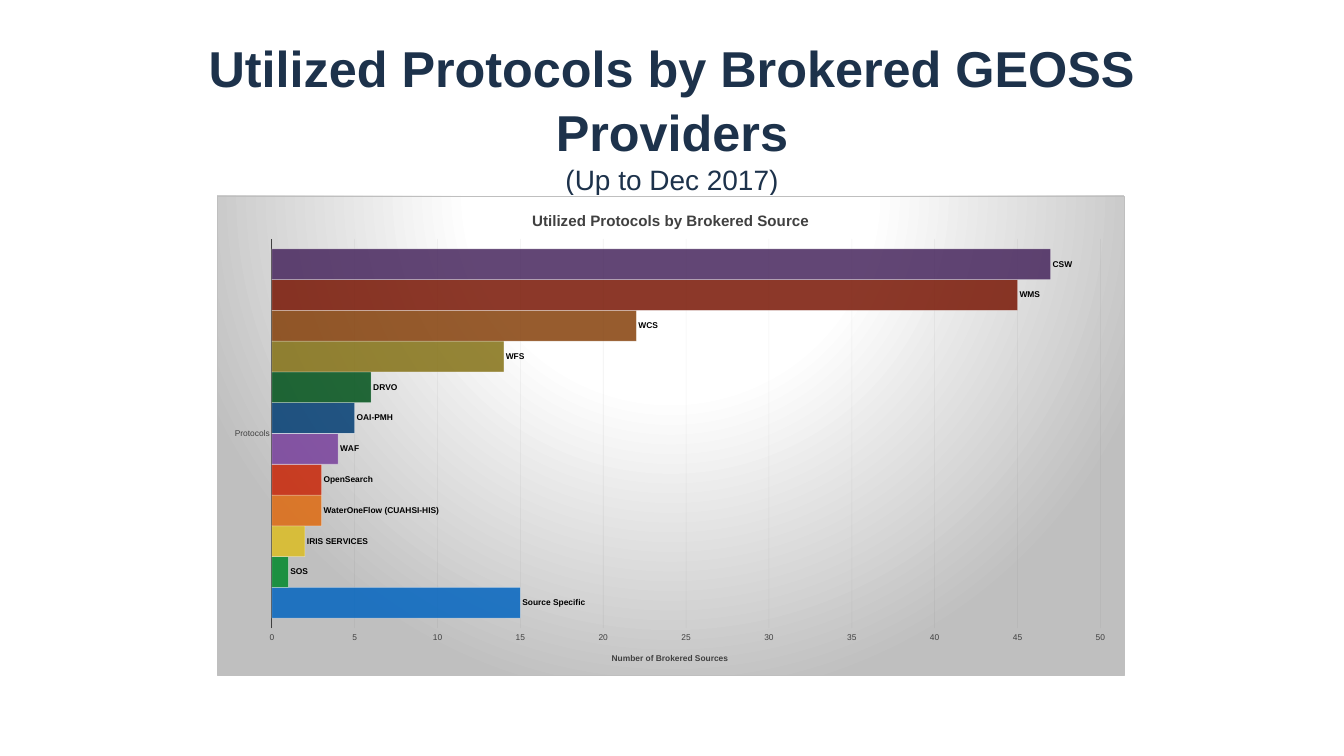
from dataclasses import dataclass

from lxml import etree
from pptx import Presentation
from pptx.chart.data import CategoryChartData
from pptx.dml.color import RGBColor
from pptx.enum import chart as ch, text
from pptx.oxml import ns, parse_xml
from pptx.util import Inches, Pt


@dataclass(frozen=True)
class Theme:
    """Colours and type sizes of the slide."""
    font: str = "Arial"
    navy: str = "1D324B"
    grey: str = "404040"
    black: str = "000000"
    white: str = "FFFFFF"
    silver: str = "BFBFBF"
    grid: str = "0D0D0D"
    title: float = 72
    subtitle: float = 40
    chart_title: float = 21.6
    label: float = 12


T = Theme()

PROTOCOLS = [
    ("Source Specific", 15, "0365C0"),
    ("SOS", 1, "00882B"),
    ("IRIS SERVICES", 2, "DCBD23"),
    ("WaterOneFlow (CUAHSI-HIS)", 3, "DE6A10"),
    ("OpenSearch", 3, "C82506"),
    ("WAF", 4, "773F9B"),
    ("OAI-PMH", 5, "023D73"),
    ("DRVO", 6, "00521A"),
    ("WFS", 14, "847115"),
    ("WCS", 22, "85400A"),
    ("WMS", 45, "781604"),
    ("CSW", 47, "47265D"),
]


def set_font(font, size, color, bold=False):
    """Format a font in the slide's typeface."""
    font.name, font.size, font.bold = T.font, Pt(size), bold
    font.color.rgb = RGBColor.from_string(color)


def add_text(p, content, size, color, bold=False):
    """Append a formatted run to a paragraph."""
    r = p.add_run()
    r.text = content
    set_font(r.font, size, color, bold)


def set_line(line, color, width, alpha=100):
    """Give a line its colour, width in points and opacity in percent."""
    line.width = Pt(width)
    line.color.rgb = RGBColor.from_string(color)
    set_alpha(line.fill, alpha)


def set_alpha(fill, percent):
    """Set the opacity of a solid fill."""
    color = fill._xPr.find(".//" + ns.qn("a:srgbClr"))
    etree.SubElement(color, ns.qn("a:alpha")).set("val", str(percent * 1000))


def set_background(chart):
    """Give the chart a radial gradient and a thin border."""
    stops = "".join(
        f'<a:gs pos="{pos * 1000}"><a:srgbClr val="{color}"/></a:gs>'
        for pos, color in ((0, T.white), (39, T.white), (100, T.silver)))
    sp_pr = parse_xml(
        f'<c:spPr {ns.nsdecls("c", "a")}><a:gradFill><a:gsLst>{stops}</a:gsLst>'
        '<a:path path="circle"><a:fillToRect l="50000" t="-80000" r="50000" b="180000"/>'
        f'</a:path></a:gradFill><a:ln w="{Pt(0.75)}"><a:solidFill>'
        f'<a:srgbClr val="{T.silver}"/></a:solidFill></a:ln></c:spPr>')
    chart._chartSpace.find(ns.qn("c:chart")).addnext(sp_pr)


def set_plot_box(chart, x, y, w, h):
    """Place the inner plot area in fractions of the chart."""
    area = chart._chartSpace.find(".//" + ns.qn("c:plotArea"))
    for old in area.findall(ns.qn("c:layout")):
        area.remove(old)
    parts = (("layoutTarget", "inner"), ("xMode", "edge"), ("yMode", "edge"),
             ("x", x), ("y", y), ("w", w), ("h", h))
    body = "".join(f'<c:{tag} val="{val}"/>' for tag, val in parts)
    area.insert(0, parse_xml(
        f'<c:layout {ns.nsdecls("c")}><c:manualLayout>{body}</c:manualLayout></c:layout>'))


def format_axes(chart):
    """Format the category and value axes."""
    cat, val = chart.category_axis, chart.value_axis
    for axis in (cat, val):
        set_font(axis.tick_labels.font, T.label, T.grey)
    cat.major_tick_mark = ch.XL_TICK_MARK.NONE
    set_line(cat.format.line, T.grey, 1.5)
    val.minimum_scale, val.maximum_scale, val.major_unit = 0, 50, 5
    val.major_tick_mark = ch.XL_TICK_MARK.OUTSIDE
    val.format.line.fill.background()
    set_line(val.major_gridlines.format.line, T.grid, 0.75, 5)
    add_text(val.axis_title.text_frame.paragraphs[0],
             "Number of Brokered Sources", T.label, T.grey, bold=True)


def format_series(s, color):
    """Colour one bar and label it with its series name."""
    s.format.fill.solid()
    s.format.fill.fore_color.rgb = RGBColor.from_string(color)
    set_alpha(s.format.fill, 85)
    set_line(s.format.line, T.white, 0.75, 50)
    labels = s.data_labels
    labels.show_series_name, labels.show_value = True, False
    labels.position = ch.XL_LABEL_POSITION.OUTSIDE_END
    set_font(labels.font, T.label, T.black, bold=True)


def build_title(slide, x, y, w, h):
    """Place the slide title and its subtitle line."""
    sp = slide.shapes.title
    sp.left, sp.top, sp.width, sp.height = map(Inches, (x, y, w, h))
    tf = sp.text_frame
    tf.word_wrap, tf.auto_size = True, text.MSO_AUTO_SIZE.NONE
    tf.vertical_anchor = text.MSO_ANCHOR.MIDDLE
    tf.margin_left = tf.margin_right = tf.margin_top = tf.margin_bottom = Inches(0.06)
    p = tf.paragraphs[0]
    p.alignment, p.line_spacing = text.PP_ALIGN.CENTER, 1.05
    add_text(p, "Utilized Protocols by Brokered GEOSS Providers", T.title, T.navy, bold=True)
    p.add_line_break()
    add_text(p, "(Up to Dec 2017)", T.subtitle, T.navy)


def build_chart(slide, x, y, w, h):
    """Place the bar chart of protocols."""
    data = CategoryChartData()
    data.categories = ["Protocols"]
    for name, count, _ in PROTOCOLS:
        data.add_series(name, [count])
    chart = slide.shapes.add_chart(
        ch.XL_CHART_TYPE.BAR_CLUSTERED, *map(Inches, (x, y, w, h)), data).chart
    set_font(chart.font, T.label, T.black)
    chart.has_legend = False
    add_text(chart.chart_title.text_frame.paragraphs[0],
             "Utilized Protocols by Brokered Source", T.chart_title, T.grey, bold=True)
    plot = chart.plots[0]
    plot.gap_width, plot.overlap, plot.vary_by_categories = 65, 0, False
    for s, (_, _, color) in zip(plot.series, PROTOCOLS):
        format_series(s, color)
    format_axes(chart)
    set_background(chart)
    set_plot_box(chart, 0.06, 0.09, 0.914, 0.812)


def main():
    """Build and save the slide."""
    prs = Presentation()
    prs.slide_width, prs.slide_height = Inches(26.67), Inches(15)
    slide = prs.slides.add_slide(prs.slide_layouts.get_by_name("Title Only"))
    build_title(slide, 1.85, 1.04, 22.97, 2.5)
    build_chart(slide, 4.31, 3.88, 18, 9.52)
    prs.save("out.pptx")


if __name__ == "__main__":
    main()
